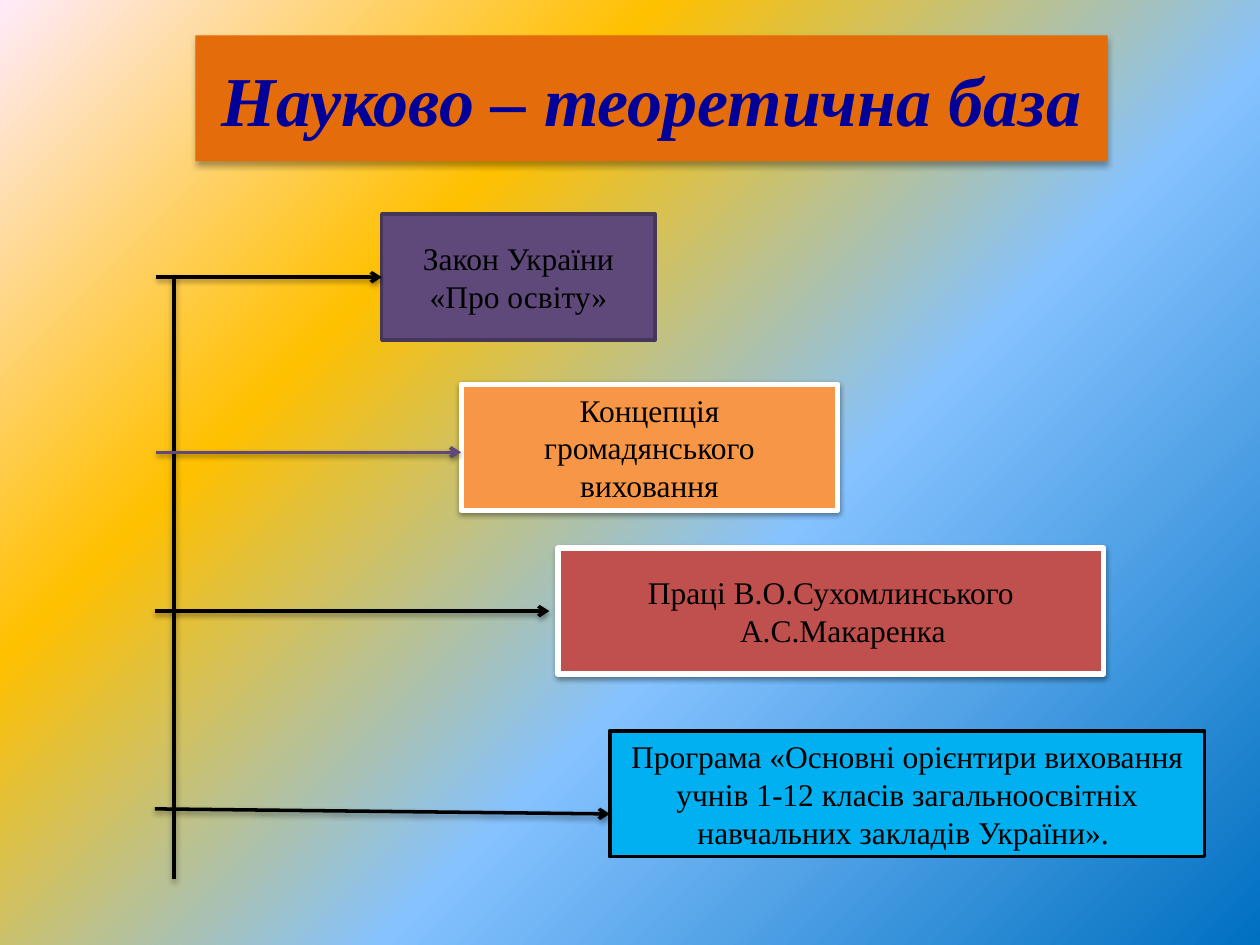
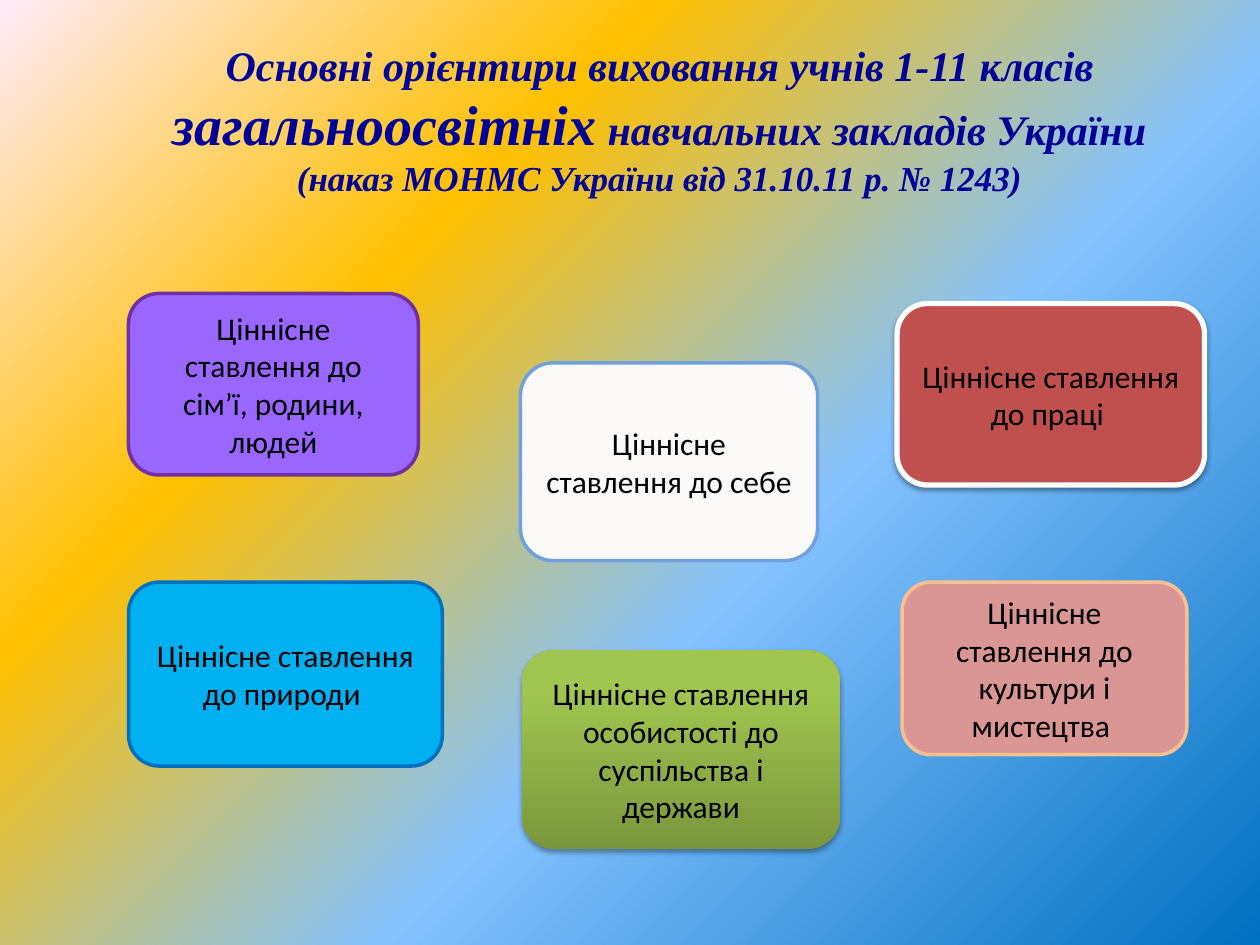
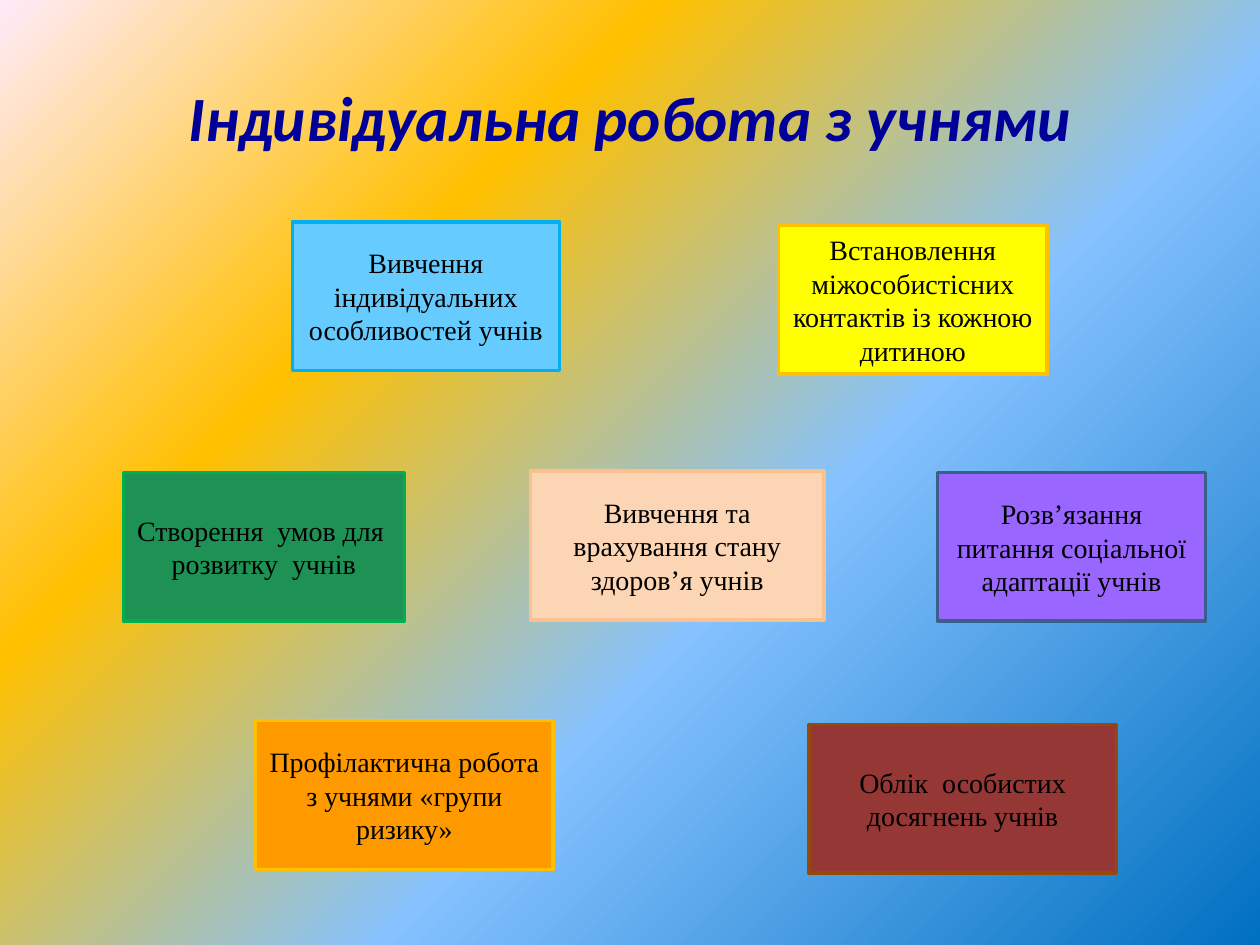
"""Build three slides on the foundations of educational work with pupils."""
import lxml.etree
import pptx
import pptx.dml.color
import pptx.enum.shapes
import pptx.enum.text
import pptx.oxml.ns
import pptx.util

Inches = pptx.util.Inches
Pt = pptx.util.Pt
RGBColor = pptx.dml.color.RGBColor
MSO_SHAPE = pptx.enum.shapes.MSO_SHAPE
SubElement = lxml.etree.SubElement
qn = pptx.oxml.ns.qn

BLACK = RGBColor(0x00, 0x00, 0x00)
WHITE = RGBColor(0xFF, 0xFF, 0xFF)
NAVY = RGBColor(0x00, 0x00, 0x99)
BLUE = RGBColor(0x00, 0x70, 0xC0)
AZURE = RGBColor(0x00, 0xB0, 0xF0)
LIGHT_BLUE = RGBColor(0x85, 0xC2, 0xFF)
SKY = RGBColor(0x66, 0xCC, 0xFF)
STEEL = RGBColor(0x3A, 0x5F, 0x8C)
SOFT_BLUE = RGBColor(0x71, 0xA1, 0xDC)
GOLD = RGBColor(0xFF, 0xC0, 0x00)
YELLOW = RGBColor(0xFF, 0xFF, 0x00)
PALE_PINK = RGBColor(0xFF, 0xEB, 0xFA)
PINK = RGBColor(0xD9, 0x96, 0x94)
BURNT_ORANGE = RGBColor(0xE4, 0x6C, 0x0A)
ORANGE = RGBColor(0xF7, 0x96, 0x46)
BRIGHT_ORANGE = RGBColor(0xFF, 0x99, 0x00)
PEACH = RGBColor(0xFA, 0xC0, 0x90)
PALE_PEACH = RGBColor(0xFC, 0xD5, 0xB5)
RED = RGBColor(0xC0, 0x50, 0x4D)
DARK_RED = RGBColor(0x95, 0x37, 0x35)
BROWN = RGBColor(0x98, 0x48, 0x07)
PLUM = RGBColor(0x5F, 0x49, 0x7A)
DARK_PLUM = RGBColor(0x46, 0x36, 0x5A)
VIOLET = RGBColor(0x99, 0x66, 0xFF)
PURPLE = RGBColor(0x70, 0x30, 0xA0)
GREEN = RGBColor(0x1E, 0x92, 0x55)
BRIGHT_GREEN = RGBColor(0x00, 0xB0, 0x50)
LIME = RGBColor(0xA0, 0xC5, 0x50)
OLIVE = RGBColor(0x7B, 0x97, 0x3D)
IVORY = RGBColor(0xFB, 0xFA, 0xF8)

SERIF = "Times New Roman"
SANS = "Calibri"


def set_text(s, paragraphs, size=18, font=SERIF, color=BLACK, bold=False):
    """Fill a shape with centred paragraphs; a run is text or (text, size)."""
    tf = s.text_frame
    tf.word_wrap = True
    tf.auto_size = pptx.enum.text.MSO_AUTO_SIZE.NONE
    tf.vertical_anchor = pptx.enum.text.MSO_ANCHOR.MIDDLE
    for i, runs in enumerate(paragraphs):
        p = tf.add_paragraph() if i else tf.paragraphs[0]
        p.alignment = pptx.enum.text.PP_ALIGN.CENTER
        for run in [runs] if isinstance(runs, str) else runs:
            text, run_size = (run, size) if isinstance(run, str) else run
            r = p.add_run()
            r.text = text
            r.font.size = Pt(run_size)
            r.font.name = font
            r.font.color.rgb = color
            r.font.bold = r.font.italic = bold


def add_shadow(s, alpha=38, blur=3.1, dist=1.6):
    """Give a shape or connector a soft shadow below it."""
    spPr = s._element.spPr
    effects = spPr.find(qn("a:effectLst"))
    if effects is None:
        effects = SubElement(spPr, qn("a:effectLst"))
    shadow = SubElement(effects, qn("a:outerShdw"), blurRad=str(Pt(blur)),
                        dist=str(Pt(dist)), dir="5400000", rotWithShape="0")
    clr = SubElement(shadow, qn("a:srgbClr"), val=str(BLACK))
    SubElement(clr, qn("a:alpha"), val=str(alpha * 1000))


prs = pptx.Presentation()
prs.slide_width = Inches(10)
prs.slide_height = Inches(7.5)

master = prs.slide_master
master.background.fill.gradient()
grad = master._element.find(".//" + qn("a:gradFill"))
grad.clear()
stops = SubElement(grad, qn("a:gsLst"))
for pos, color in [(0, BLUE), (40, LIGHT_BLUE), (70, GOLD), (100, PALE_PINK)]:
    stop = SubElement(stops, qn("a:gs"), pos=str(pos * 1000))
    SubElement(stop, qn("a:srgbClr"), val=str(color))
circle = SubElement(grad, qn("a:path"), {"path": "circle"})
SubElement(circle, qn("a:fillToRect"), l="100000", t="100000")

law_boxes = [
    (3.03, 1.7, 2.17, 1, PLUM, DARK_PLUM, ["Закон України", "«Про освіту»"]),
    (3.66, 3.05, 2.99, 1, ORANGE, WHITE, ["Концепція громадянського виховання"]),
    (4.43, 4.35, 4.33, 1, RED, WHITE, ["Праці В.О.Сухомлинського", "А.С.Макаренка"]),
    (4.84, 5.8, 4.72, 1, AZURE, BLACK,
     ["Програма «Основні орієнтири виховання учнів 1-12 класів "
      "загальноосвітніх навчальних закладів України». "]),
]
value_boxes = [
    (1.02, 2.33, 2.3, 1.44, VIOLET, PURPLE,
     ["Ціннісне ставлення до сім’ї, родини, людей"]),
    (7.12, 2.41, 2.44, 1.44, RED, WHITE, ["Ціннісне ставлення до праці "]),
    (4.13, 2.88, 2.36, 1.57, IVORY, SOFT_BLUE, ["Ціннісне ставлення до себе"]),
    (1.02, 4.62, 2.49, 1.46, AZURE, BLUE, ["Ціннісне ставлення до природи "]),
    (7.16, 4.62, 2.26, 1.37, PINK, PEACH,
     ["Ціннісне ставлення до культури і мистецтва "]),
    (4.14, 5.16, 2.53, 1.58, LIME, None,
     ["Ціннісне ставлення особистості до суспільства і держави"]),
]
pupil_boxes = [
    (2.32, 1.76, 2.12, 1.18, SKY, AZURE,
     ["Вивчення індивідуальних особливостей учнів"]),
    (6.18, 1.79, 2.13, 1.18, YELLOW, GOLD,
     ["Встановлення міжособистісних контактів із кожною дитиною"]),
    (0.98, 3.75, 2.23, 1.18, GREEN, BRIGHT_GREEN,
     ["Створення  умов для  розвитку  учнів"]),
    (4.21, 3.74, 2.33, 1.18, PALE_PEACH, PEACH,
     ["Вивчення та врахування стану здоров’я учнів"]),
    (7.44, 3.75, 2.13, 1.18, VIOLET, STEEL,
     ["Розв’язання питання соціальної адаптації учнів"]),
    (2.03, 5.72, 2.36, 1.18, BRIGHT_ORANGE, GOLD,
     ["Профілактична робота з учнями «групи ризику»"]),
    (6.42, 5.75, 2.44, 1.18, DARK_RED, BROWN,
     ["Облік  особистих досягнень учнів"]),
]
orientation_title = [
    ["Основні орієнтири виховання учнів 1-11 класів ",
     ("загальноосвітніх", 32), " навчальних закладів України"],
    [("(наказ МОНМС України від 31.10.11 р. № 1243)", 20)],
]
pages = [
    (["Науково – теоретична база"], (1.55, 0.28, 7.24, 1), 40, SERIF,
     MSO_SHAPE.RECTANGLE, 18, SERIF, law_boxes),
    (orientation_title, (1.06, 0.28, 8.35, 1.33), 24, SERIF,
     MSO_SHAPE.FLOWCHART_ALTERNATE_PROCESS, 18, SANS, value_boxes),
    (["Індивідуальна робота з учнями"], (0.5, 0.3, 9, 1.25), 36, SANS,
     MSO_SHAPE.RECTANGLE, 16, SERIF, pupil_boxes),
]

drawn = []
for title, place, title_size, title_font, kind, size, font, boxes in pages:
    slide = prs.slides.add_slide(prs.slide_layouts[5])
    sp = slide.shapes.title
    sp.left, sp.top, sp.width, sp.height = map(Inches, place)
    set_text(sp, title, size=title_size, font=title_font, color=NAVY, bold=True)
    shapes = []
    for x, y, w, h, fill, line, text in boxes:
        s = slide.shapes.add_shape(kind, Inches(x), Inches(y), Inches(w), Inches(h))
        s.shadow.inherit = False
        s.fill.solid()
        s.fill.fore_color.rgb = fill
        if line is None:
            s.line.fill.background()
            add_shadow(s, alpha=35, dist=1.8)
        else:
            s.line.color.rgb = line
            s.line.width = Pt(3 if line == WHITE else 2)
        if line == WHITE:
            add_shadow(s)
        set_text(s, text, size=size, font=font)
        shapes.append(s)
    drawn.append((slide, shapes))

slide, law_shapes = drawn[0]
banner = slide.shapes.title
banner.fill.solid()
banner.fill.fore_color.rgb = BURNT_ORANGE
banner.shadow.inherit = False
add_shadow(banner, alpha=32, blur=3.5, dist=2.2)
author = law_shapes[2].text_frame.paragraphs[1]
author._p.get_or_add_pPr().set("marL", str(Inches(0.19)))

lines = [
    (1.38, 2.18, 1.38, 6.98, BLACK, False),
    (1.24, 2.2, 3.03, 2.2, BLACK, True),
    (1.24, 3.59, 3.66, 3.59, PLUM, True),
    (1.23, 4.85, 4.36, 4.85, BLACK, True),
    (1.23, 6.42, 4.84, 6.46, BLACK, True),
]
connectors = []
for x1, y1, x2, y2, color, arrow in lines:
    c = slide.shapes.add_connector(pptx.enum.shapes.MSO_CONNECTOR.STRAIGHT,
                                   Inches(x1), Inches(y1), Inches(x2), Inches(y2))
    c.line.color.rgb = color
    c.line.width = Pt(2)
    if arrow:
        SubElement(c.line._get_or_add_ln(), qn("a:tailEnd"), type="arrow")
    add_shadow(c)
    connectors.append(c)
connectors[1].end_connect(law_shapes[0], 1)

society = drawn[1][1][-1]
society.fill.gradient()
society.fill.gradient_angle = 90
for stop, pos, color in zip(society.fill.gradient_stops, (0, 0.8), (OLIVE, LIME)):
    stop.position = pos
    stop.color.rgb = color

prs.save("out.pptx")
